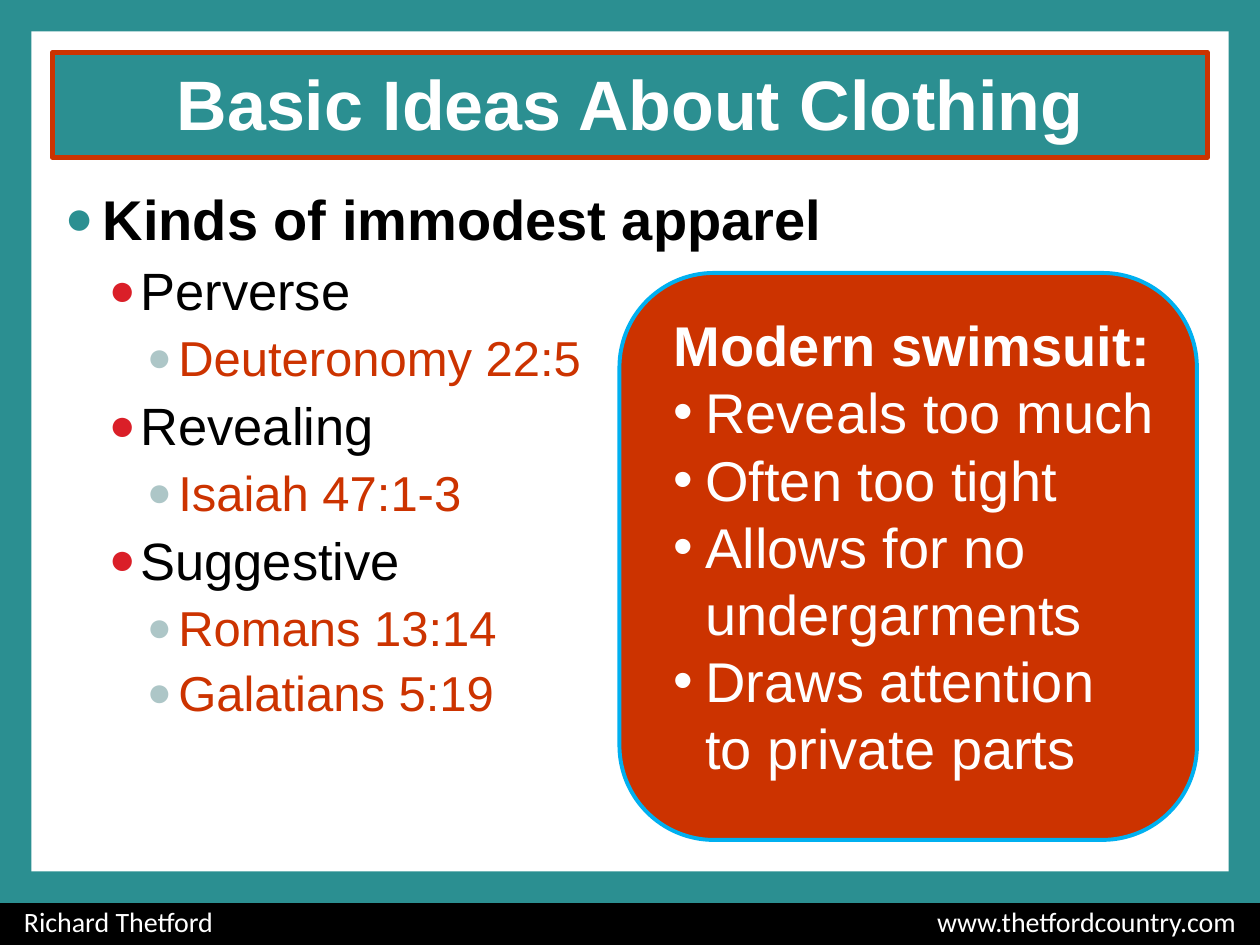
from lxml.etree import SubElement as Sub
from pptx import Presentation
from pptx.dml.color import RGBColor
from pptx.enum.shapes import MSO_SHAPE as Kind
from pptx.enum.text import MSO_ANCHOR as Anchor, PP_ALIGN as Align
from pptx.oxml.ns import qn
from pptx.util import Inches, Pt

UNIT = Inches(10) / 120
TEAL, RUST, WHITE, BLACK = "2B8F91", "CC3300", "FFFFFF", "000000"
LEVELS = [
    (0.3, 0.3, TEAL, 32, BLACK, True),
    (0.6, 0.25, "DA1F28", 30, BLACK, False),
    (0.9, 0.25, "ADC6C7", 28, RUST, False),
]
KINDS = [
    (0, "Kinds of immodest apparel"),
    (1, "Perverse"),
    (2, "Deuteronomy 22:5"),
    (1, "Revealing"),
    (2, "Isaiah 47:1-3"),
    (1, "Suggestive"),
    (2, "Romans 13:14"),
    (2, "Galatians 5:19"),
]
FAULTS = [
    ["Reveals too much"],
    ["Often too tight"],
    ["Allows for no", "undergarments"],
    ["Draws attention", "to private parts"],
]


def color(code):
    """Turn a hex string into a colour."""
    return RGBColor.from_string(code)


def grid(*box):
    """Turn grid columns and rows into lengths."""
    return [round(n * UNIT) for n in box]


def paint(shape, fill, line=None, width=0):
    """Give a shape its fill and outline."""
    shape.fill.solid()
    shape.fill.fore_color.rgb = color(fill)
    if line:
        shape.line.color.rgb = color(line)
        shape.line.width = Pt(width)
    else:
        shape.line.fill.background()


def block(slide, box, fill, line=None, width=0, kind=Kind.RECTANGLE):
    """Add a filled shape."""
    shape = slide.shapes.add_shape(kind, *grid(*box))
    shape.shadow.inherit = False
    paint(shape, fill, line, width)
    return shape


def write(para, text, size, code, bold=False, face="Arial"):
    """Add one run of text."""
    run = para.add_run()
    run.text = text
    font = run.font
    font.name, font.size, font.bold = face, Pt(size), bold
    font.color.rgb = color(code)


def bullet(para, mark, left, hang, code, share=100):
    """Give a paragraph a hanging bullet."""
    props = para._p.get_or_add_pPr()
    props.set("marL", str(Inches(left)))
    props.set("indent", str(-Inches(hang)))
    Sub(Sub(props, qn("a:buClr")), qn("a:srgbClr"), val=code)
    Sub(props, qn("a:buSzPct"), val=str(share * 1000))
    Sub(props, qn("a:buFont"), typeface="Arial")
    Sub(props, qn("a:buChar"), char=mark)


def panel(slide, box):
    """Add a wrapping text box and return its frame."""
    frame = slide.shapes.add_textbox(*grid(*box)).text_frame
    frame.word_wrap = True
    return frame


def page(slide, box):
    """Lay the rounded white page behind everything."""
    sheet = block(slide, box, WHITE, BLACK, 0.5, Kind.ROUNDED_RECTANGLE)
    sheet.adjustments[0] = 0.05
    slide.shapes.title._element.addprevious(sheet._element)


def heading(slide, box):
    """Place and format the title."""
    title = slide.shapes.title
    title.left, title.top, title.width, title.height = grid(*box)
    paint(title, TEAL, RUST, 3)
    frame = title.text_frame
    frame.vertical_anchor = Anchor.BOTTOM
    frame.margin_bottom = Inches(0.1)
    para = frame.paragraphs[0]
    para.alignment = Align.CENTER
    write(para, "Basic Ideas About Clothing", 40, WHITE, True)


def outline(slide, box):
    """Write the outline of kinds and verses."""
    frame = panel(slide, box)
    for i, (level, text) in enumerate(KINDS):
        para = frame.add_paragraph() if i else frame.paragraphs[0]
        left, hang, dot, size, ink, bold = LEVELS[level]
        para.level = level
        bullet(para, "●", left, hang, dot, 85)
        para.space_before = Pt(3.7 if i else 0)
        write(para, text, size, ink, bold)


def card(slide, box):
    """Draw the rounded card and its list."""
    x, y, w, h = box
    block(slide, box, RUST, "00B0F0", 2.25, Kind.ROUNDED_RECTANGLE)
    frame = panel(slide, (x + 4, y + 3, w - 6, h - 7.5))
    write(frame.paragraphs[0], "Modern swimsuit:", 32, WHITE, True)
    for lines in FAULTS:
        para = frame.add_paragraph()
        bullet(para, "•", 0.25, 0.25, WHITE)
        for i, line in enumerate(lines):
            if i:
                para.add_line_break()
            write(para, line, 32, WHITE)


def footer(slide, box):
    """Draw the footer with its author and address."""
    x, y, w, h = box
    block(slide, box, BLACK)
    half = w / 2
    for left, text, side in [
        (x, "Richard Thetford", Align.LEFT),
        (x + half, "www.thetfordcountry.com", Align.RIGHT),
    ]:
        frame = panel(slide, (left, y, half, h))
        frame.margin_left = frame.margin_right = Inches(0.19)
        frame.vertical_anchor = Anchor.MIDDLE
        para = frame.paragraphs[0]
        para.alignment = side
        write(para, text, 16, WHITE, face="Calibri")


def border(slide, box, thick):
    """Frame a box with four bands."""
    x, y, w, h = box
    for band in [
        (x, y, thick, h),
        (x + w - thick, y, thick, h),
        (x, y, w, thick),
        (x, y + h - thick, w, thick),
    ]:
        block(slide, band, TEAL)


def main():
    """Build and save the slide."""
    deck = Presentation()
    deck.slide_width, deck.slide_height = grid(120, 90)
    slide = deck.slides.add_slide(deck.slide_layouts[5])
    page(slide, (1, 1, 118, 88))
    heading(slide, (5, 5, 110, 10))
    outline(slide, (5, 17, 110, 65))
    footer(slide, (0, 85.5, 120, 4.5))
    border(slide, (0, 0, 120, 86), 3)
    card(slide, (59, 26, 55, 54))
    deck.save("out.pptx")


if __name__ == "__main__":
    main()
